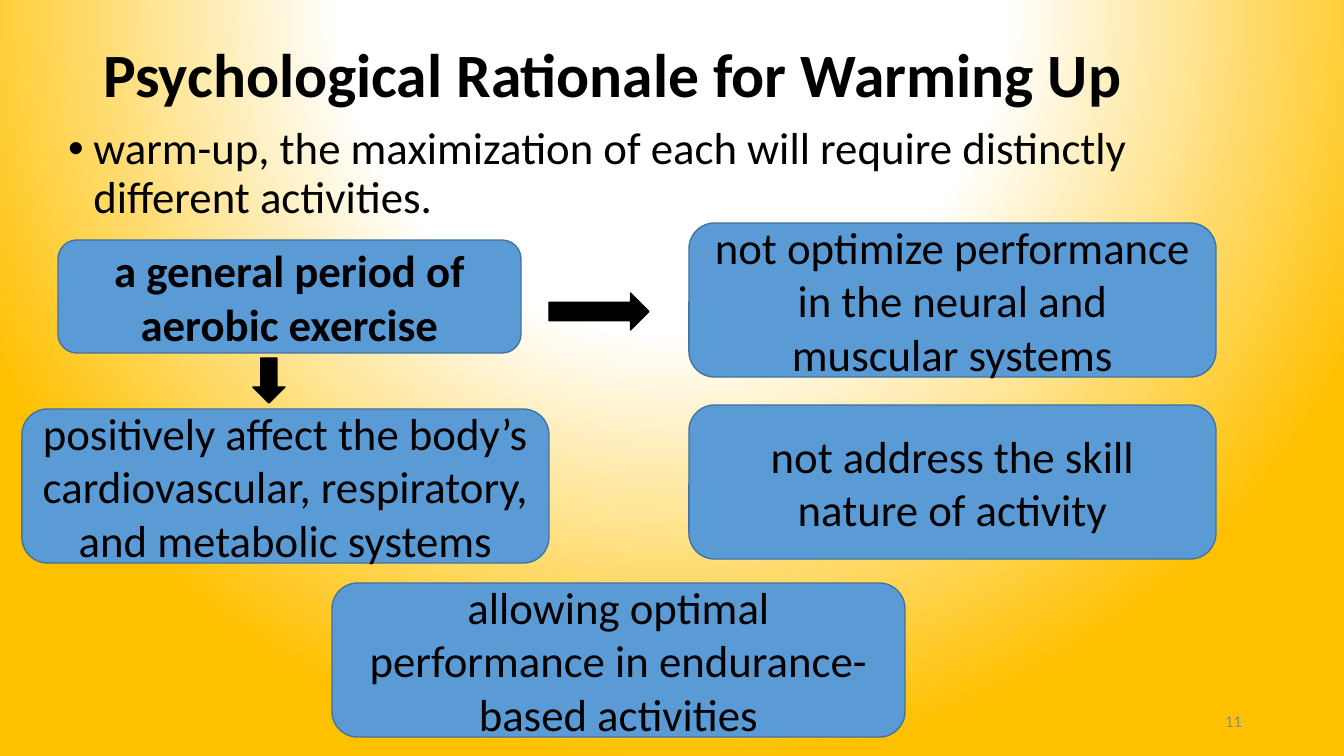
from lxml import etree
from pptx import Presentation
from pptx.dml.color import RGBColor
from pptx.enum.shapes import MSO_SHAPE as SHAPE
from pptx.enum.text import MSO_ANCHOR as ANCHOR, MSO_AUTO_SIZE as AUTO, PP_ALIGN as ALIGN
from pptx.oxml import parse_xml
from pptx.oxml.ns import nsdecls, qn
from pptx.util import Pt

PX = 12192000 / 1344


def emu(*lengths):
    return [round(n * PX) for n in lengths]


def write(tf, text, size=32, color="000000", bold=False, align=ALIGN.CENTER,
          anchor=ANCHOR.MIDDLE, spacing=None, bullet=False):
    tf.word_wrap = True
    tf.auto_size = AUTO.NONE
    tf.vertical_anchor = anchor
    for i, line in enumerate(text.split("\n")):
        p = tf.paragraphs[0] if i == 0 else tf.add_paragraph()
        if bullet:
            pPr = p._p.get_or_add_pPr()
            pPr.set("marL", "228600")
            pPr.set("indent", "-228600")
            etree.SubElement(pPr, qn("a:buFont"), typeface="Arial")
            etree.SubElement(pPr, qn("a:buChar"), char="•")
        p.alignment = align
        p.space_before = Pt(0)
        if spacing:
            p.line_spacing = spacing
        r = p.add_run()
        r.text = line
        r.font.name = "Calibri"
        r.font.size = Pt(size)
        r.font.bold = bold
        r.font.color.rgb = RGBColor.from_string(color)


prs = Presentation()
prs.slide_width, prs.slide_height = emu(1344, 756)
s = prs.slides.add_slide(prs.slide_layouts[1])

stops = "".join(f'<a:gs pos="{pos}"><a:srgbClr val="{color}"/></a:gs>'
                for pos, color in [(0, "FFFFFF"), (43000, "FFFFFF"), (100000, "FFC000")])
s._element.cSld.insert(0, parse_xml(
    f'<p:bg {nsdecls("p", "a")}><p:bgPr><a:gradFill rotWithShape="1"><a:gsLst>{stops}</a:gsLst>'
    '<a:path path="circle"><a:fillToRect l="50000" t="-80000" r="50000" b="180000"/></a:path>'
    '</a:gradFill><a:effectLst/></p:bgPr></p:bg>'))

title, body = s.shapes.title, s.placeholders[1]
title.left, title.top, title.width, title.height = emu(93, 31, 1159, 94)
write(title.text_frame, "Psychological Rationale for Warming Up", size=44, bold=True,
      align=ALIGN.LEFT, spacing=0.9)
body.left, body.top, body.width, body.height = emu(58, 121, 1177, 120)
write(body.text_frame,
      "warm-up, the maximization of each will require distinctly different activities.",
      align=ALIGN.LEFT, anchor=ANCHOR.TOP, spacing=0.9, bullet=True)

BOX, BLUE, EDGE, BLACK = SHAPE.ROUNDED_RECTANGLE, "5B9BD5", "43739E", "000000"
shapes = [
    (BOX, (22, 409, 527, 154), BLUE, EDGE, False,
     "positively affect the body’s cardiovascular, respiratory, and metabolic systems"),
    (BOX, (58, 240, 463, 113), BLUE, EDGE, True, "a general period of aerobic exercise"),
    (SHAPE.DOWN_ARROW, (253, 358, 32, 45), BLACK, BLACK, False, ""),
    (BOX, (332, 583, 573, 154), BLUE, EDGE, False,
     "allowing optimal performance in endurance-based activities"),
    (BOX, (689, 223, 527, 154), BLUE, EDGE, False,
     "not optimize performance in the neural and\nmuscular systems"),
    (BOX, (689, 405, 527, 154), BLUE, EDGE, False,
     "not address the skill\nnature of activity"),
    (SHAPE.RIGHT_ARROW, (549, 293, 100, 37), BLACK, BLACK, False, ""),
]
for kind, at, fill, line, bold, text in shapes:
    sp = s.shapes.add_shape(kind, *emu(*at))
    sp.shadow.inherit = False
    sp.fill.solid()
    sp.fill.fore_color.rgb = RGBColor.from_string(fill)
    sp.line.color.rgb = RGBColor.from_string(line)
    sp.line.width = Pt(1)
    if text:
        write(sp.text_frame, text, bold=bold)

number = s.shapes.add_textbox(*emu(950, 701, 302, 40))
write(number.text_frame, "11", size=12, color="8C8C8C", align=ALIGN.RIGHT)

prs.save("out.pptx")
